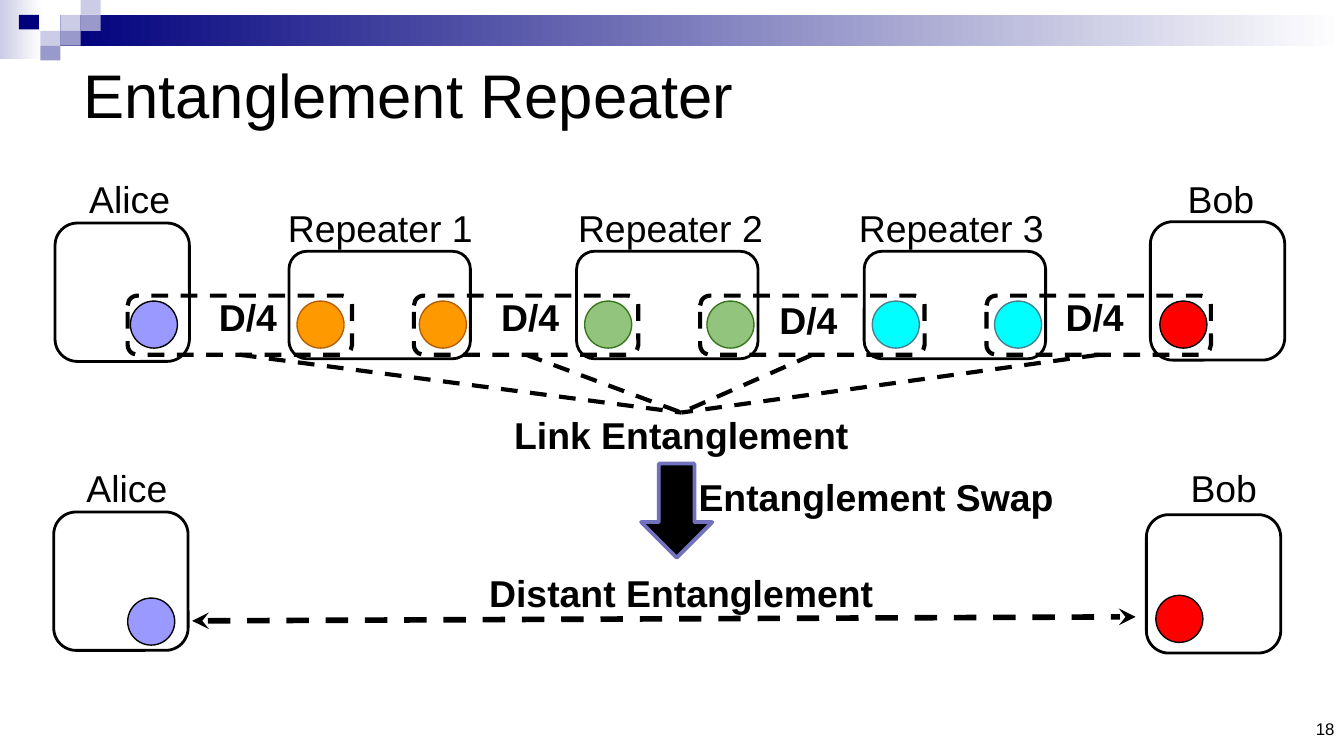
from lxml import etree
from pptx import Presentation
from pptx.dml.color import RGBColor
from pptx.enum.dml import MSO_LINE_DASH_STYLE as DASH
from pptx.enum.shapes import MSO_CONNECTOR, MSO_SHAPE as SHAPE
from pptx.enum.text import MSO_ANCHOR as ANCHOR, MSO_AUTO_SIZE, PP_ALIGN as ALIGN
from pptx.oxml.ns import qn
from pptx.util import Inches, Pt

BLACK = "000000"
rgb = RGBColor.from_string

prs = Presentation()
prs.slide_width = Inches(10)
prs.slide_height = Inches(10) * 9 // 16
s = prs.slides.add_slide(prs.slide_layouts[5])


def add_shape(kind, x, y, w, h, fill=None, line=None, width=0.75, dash=None):
    sp = s.shapes.add_shape(kind, Inches(x), Inches(y), Inches(w), Inches(h))
    sp.shadow.inherit = False
    if fill:
        sp.fill.solid()
        sp.fill.fore_color.rgb = rgb(fill)
    else:
        sp.fill.background()
    if line:
        sp.line.color.rgb = rgb(line)
        sp.line.width = Pt(width)
        sp.line.dash_style = dash
    else:
        sp.line.fill.background()
    return sp


def set_text(sp, text, size=20, bold=False, align=ALIGN.CENTER,
             anchor=ANCHOR.TOP, inset_x=0.1, inset_y=0.1):
    tf = sp.text_frame
    frame = {
        "word_wrap": True, "auto_size": MSO_AUTO_SIZE.NONE, "vertical_anchor": anchor,
        "margin_left": Inches(inset_x), "margin_right": Inches(inset_x),
        "margin_top": Inches(inset_y), "margin_bottom": Inches(inset_y),
    }
    for name, value in frame.items():
        setattr(tf, name, value)
    p = tf.paragraphs[0]
    p.alignment = align
    r = p.add_run()
    r.text = text
    for name, value in {"name": "Arial", "size": Pt(size), "bold": bold}.items():
        setattr(r.font, name, value)
    r.font.color.rgb = rgb(BLACK)


# Header band: two gradients and a mosaic of small tiles
for x, y, w, h, start in [(0, 0, 0.31, 0.44, "CCCCE6"), (0.45, 0.11, 9.55, 0.23, "00007D")]:
    band = add_shape(SHAPE.RECTANGLE, x, y, w, h)
    band.fill.gradient()
    band.fill.gradient_angle = 0
    for stop, color in zip(band.fill.gradient_stops, (start, "FFFFFF")):
        stop.color.rgb = rgb(color)

for x, y, h, color in [
    (0.45, 0.11, 0.12, "CCCCE6"), (0.6, 0, 0.11, "CCCCE6"), (0.6, 0.11, 0.12, "9999CC"),
    (0.3, 0.23, 0.11, "CCCCE6"), (0.14, 0.11, 0.11, "00007D"), (0.45, 0.23, 0.11, "9999CC"),
    (0.3, 0.34, 0.11, "9999CC"),
]:
    add_shape(SHAPE.RECTANGLE, x, y, 0.15, h, color)

# Title and slide number
title = s.shapes.title
title.left, title.top, title.width, title.height = map(Inches, (0.55, 0.29, 9, 0.81))
set_text(title, "Entanglement Repeater", 33, align=ALIGN.LEFT, anchor=ANCHOR.MIDDLE,
         inset_x=0.07, inset_y=0.04)
number = s.shapes.add_textbox(Inches(8.3), Inches(5.3), Inches(1.7), Inches(0.24))
set_text(number, "18", 9, align=ALIGN.RIGHT, anchor=ANCHOR.BOTTOM, inset_x=0.07, inset_y=0.04)

# End nodes, before and after the swap
for x, y, qubit_x, qubit_y, color in [
    (0.41, 1.66, 0.97, 2.24, "9999FF"), (8.56, 1.65, 8.63, 2.24, "FF0000"),
    (0.4, 3.81, 0.95, 4.45, "9999FF"), (8.53, 3.83, 8.6, 4.43, "FF0000"),
]:
    add_shape(SHAPE.ROUNDED_RECTANGLE, x, y, 1, 1.03, line=BLACK, width=1.5)
    add_shape(SHAPE.OVAL, qubit_x, qubit_y, 0.35, 0.35, color, BLACK)

# Repeaters with two qubits each
for i, (color, edge) in enumerate([("FF9900", "B45F06"), ("93C47D", "38761D"),
                                   ("00FFFF", "45818E")]):
    x = 2.15 + 2.14 * i
    add_shape(SHAPE.ROUNDED_RECTANGLE, x, 1.87, 1.35, 0.8, line=BLACK, width=1.5)
    for dx in (0.06, 0.97):
        add_shape(SHAPE.OVAL, x + dx, 2.24, 0.35, 0.35, color, edge)

# Dashed links between neighbours
links = [add_shape(SHAPE.ROUNDED_RECTANGLE, 0.95 + 2.13 * i, 2.2, 1.67, 0.44,
                   line=BLACK, width=2.25, dash=DASH.DASH) for i in range(4)]

add_shape(SHAPE.DOWN_ARROW, 4.77, 3.45, 0.53, 0.7, BLACK, "7171BD", 2)

# Labels
for text, x, y, w, bold in [
    ("Alice", 0.35, 1.21, 1.23, False), ("Bob", 8.56, 1.21, 1.05, False),
    ("Repeater 1", 1.87, 1.43, 1.92, False), ("Repeater 2", 4.06, 1.43, 1.86, False),
    ("Repeater 3", 6.1, 1.43, 1.96, False),
    ("D/4", 1.53, 2.09, 0.69, True), ("D/4", 3.63, 2.09, 0.66, True),
    ("D/4", 5.7, 2.11, 0.69, True), ("D/4", 7.83, 2.09, 0.65, True),
    ("Alice", 0.41, 3.36, 1.07, False), ("Bob", 8.76, 3.36, 0.85, False),
    ("Entanglement Swap", 4.39, 3.43, 4.26, True),
    ("Distant Entanglement", 2.94, 4.14, 4.26, True),
]:
    label = s.shapes.add_textbox(Inches(x), Inches(y), Inches(w), Inches(0.54))
    align = ALIGN.LEFT if text == "D/4" or (text == "Bob" and y > 3) else ALIGN.CENTER
    set_text(label, text, bold=bold, align=align)

link_label = s.shapes.add_textbox(Inches(3.08), Inches(3.07), Inches(3.98), Inches(0.44))
set_text(link_label, "Link Entanglement", bold=True, inset_y=0)

# Lines from each link to its label, and the distant link with arrowheads
for link in links + [None]:
    line = s.shapes.add_connector(MSO_CONNECTOR.STRAIGHT, Inches(1.43), Inches(4.62),
                                  Inches(8.45), Inches(4.59))
    line.line.color.rgb = rgb(BLACK)
    line.line.width = Pt(2.25 if link else 3)
    line.line.dash_style = DASH.DASH
    if link:
        line.begin_connect(link, 2)
        line.end_connect(link_label, 0)
    else:
        ln = line._element.spPr.find(qn("a:ln"))
        for end in ("a:headEnd", "a:tailEnd"):
            etree.SubElement(ln, qn(end), type="stealth")
    etree.SubElement(line._element.spPr, qn("a:effectLst"))

prs.save("out.pptx")
